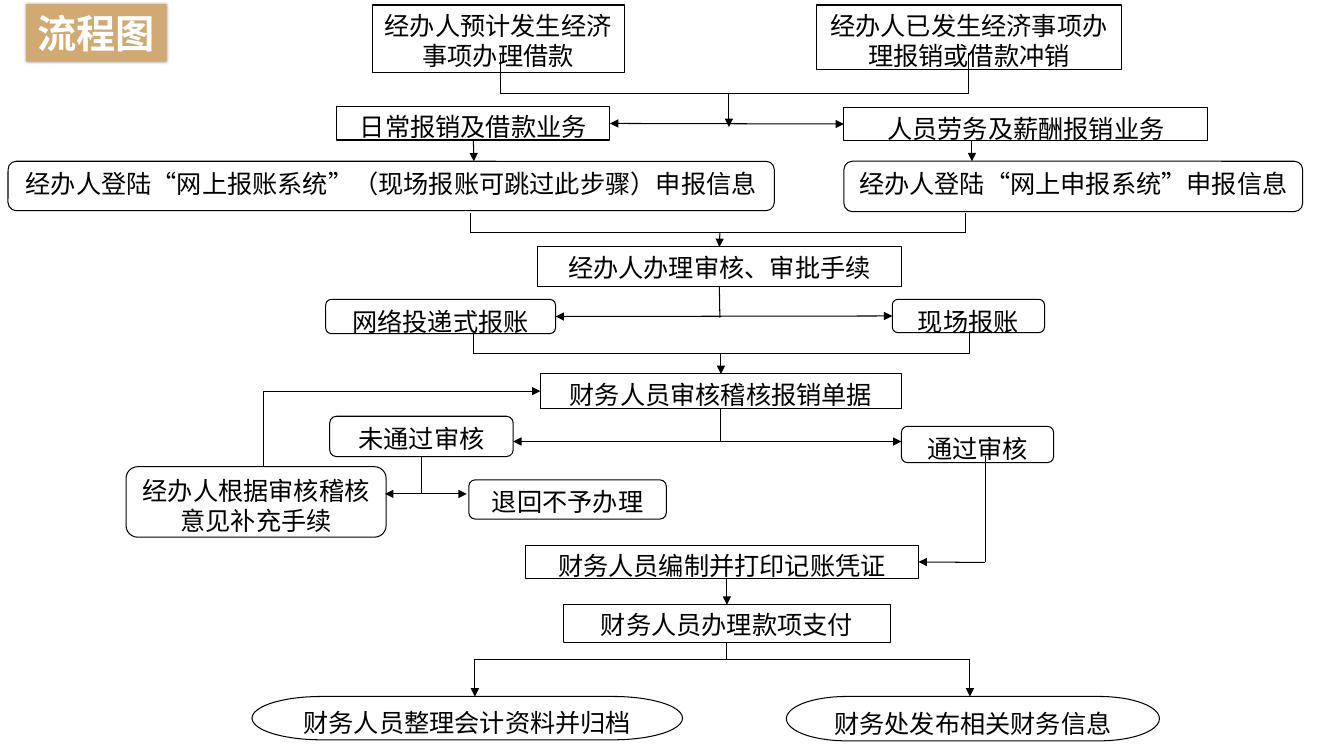
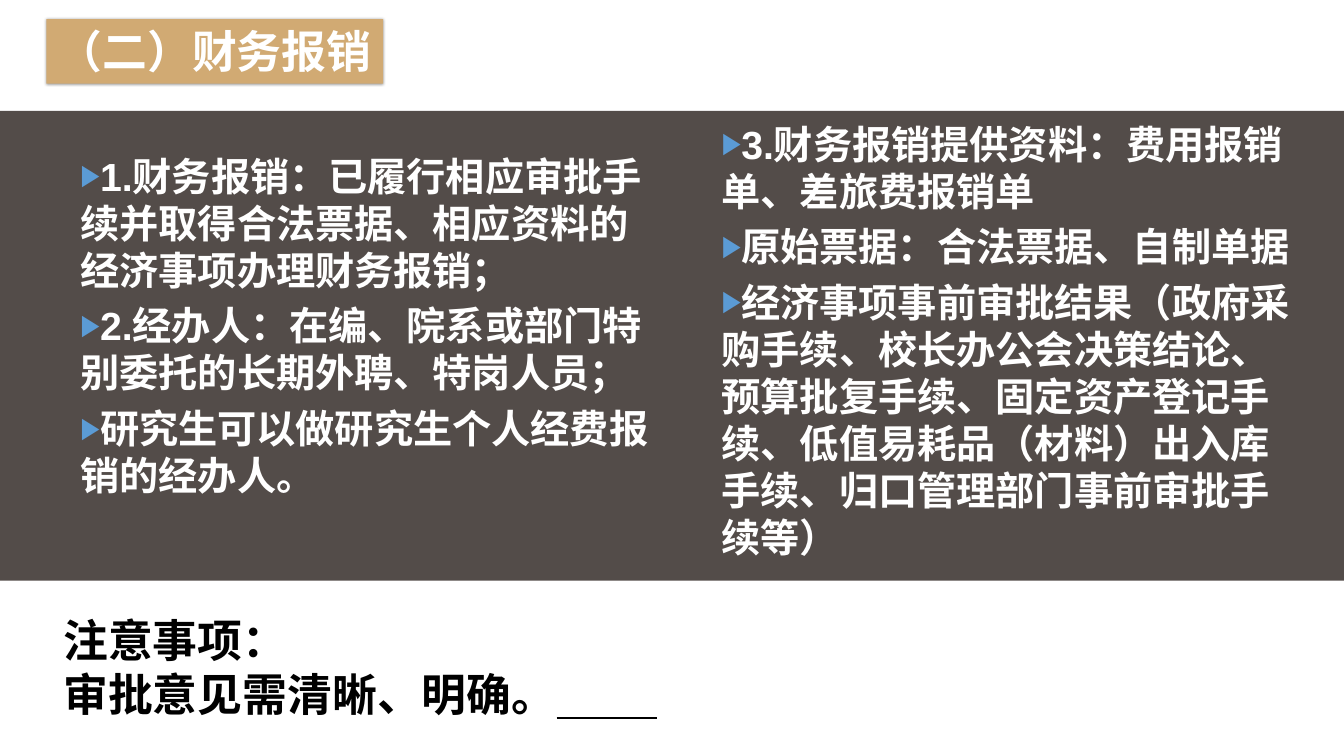
from lxml import etree
from pptx import Presentation
from pptx.dml.color import RGBColor
from pptx.enum.shapes import MSO_CONNECTOR, MSO_SHAPE
from pptx.enum.text import MSO_ANCHOR, MSO_AUTO_SIZE, PP_ALIGN
from pptx.oxml.ns import qn
from pptx.util import Inches, Pt

RECT = MSO_SHAPE.RECTANGLE
ROUND = MSO_SHAPE.ROUNDED_RECTANGLE
ALTERNATE = MSO_SHAPE.FLOWCHART_ALTERNATE_PROCESS
TERMINATOR = MSO_SHAPE.FLOWCHART_TERMINATOR
STRAIGHT = MSO_CONNECTOR.STRAIGHT
TOP, MIDDLE = MSO_ANCHOR.TOP, MSO_ANCHOR.MIDDLE
LEFT, CENTER = PP_ALIGN.LEFT, PP_ALIGN.CENTER
GROW = MSO_AUTO_SIZE.SHAPE_TO_FIT_TEXT

# Shared style
BLACK, WHITE = "000000", "FFFFFF"
GOLD, BROWN, BLUE = "D1AA73", "534C49", "5B9BD5"
FLOW_FONT, BODY_FONT, CJK_FONT = "Calibri", "Arial", "Noto Sans CJK JP"
SIDE_TOP, SIDE_LEFT, SIDE_BOTTOM, SIDE_RIGHT = range(4)


def rgb(color):
    return RGBColor.from_string(color)


def add_run(paragraph, text, size, font, color, bold=False):
    run = paragraph.add_run()
    run.text = text
    run.font.size = Pt(size)
    run.font.name = font
    run.font.bold = bold
    run.font.color.rgb = rgb(color)


def add_box(slide, kind, place, fill, line=None):
    box = slide.shapes.add_shape(kind, *map(Inches, place))
    box.shadow.inherit = False
    box.fill.solid()
    box.fill.fore_color.rgb = rgb(fill)
    if line:
        box.line.color.rgb = rgb(line)
        box.line.width = Pt(0.75)
    else:
        box.line.fill.background()
    return box


def add_title(slide, place, text, size, font):
    """Gold label with a soft shadow."""
    title = add_box(slide, RECT, place, GOLD)
    effects = title._element.spPr.find(qn("a:effectLst"))
    shadow = etree.SubElement(effects, qn("a:outerShdw"),
                              blurRad=str(Pt(2)), dist="0", dir="0")
    color = etree.SubElement(shadow, qn("a:srgbClr"), val=BLACK)
    etree.SubElement(color, qn("a:alpha"), val="40000")
    frame = title.text_frame
    frame.word_wrap = False
    frame.auto_size = GROW
    frame.vertical_anchor = TOP
    frame.paragraphs[0].alignment = CENTER
    add_run(frame.paragraphs[0], text, size, font, WHITE, bold=True)


def add_step(slide, kind, place, text):
    """White outlined step of the flow chart."""
    step = add_box(slide, kind, place, WHITE, BLACK)
    frame = step.text_frame
    frame.word_wrap = True
    frame.vertical_anchor = TOP
    frame.paragraphs[0].alignment = CENTER
    add_run(frame.paragraphs[0], text, 18, FLOW_FONT, BLACK)
    return step


def add_line(slide, start, end, head=False, tail=False, width=0.75):
    """Each end is an (x, y) point or a (step, side) pair."""
    glued = [not isinstance(stop[0], (int, float)) for stop in (start, end)]
    begin_at = (0, 0) if glued[0] else start
    end_at = (0, 0) if glued[1] else end
    line = slide.shapes.add_connector(STRAIGHT, *map(Inches, begin_at + end_at))
    if glued[0]:
        line.begin_connect(*start)
    if glued[1]:
        line.end_connect(*end)
    line.line.color.rgb = rgb(BLACK)
    line.line.width = Pt(width)
    outline = line.line._get_or_add_ln()
    for tag, wanted in (("a:headEnd", head), ("a:tailEnd", tail)):
        if wanted:
            etree.SubElement(outline, qn(tag), type="triangle")
    etree.SubElement(line._element.spPr, qn("a:effectLst"))


def add_bracket(slide, left, right, bar_y, leg_y, tail=False):
    """Horizontal bar with a leg at both ends."""
    add_line(slide, (left, bar_y), (right, bar_y))
    for x in (left, right):
        add_line(slide, (x, bar_y), (x, leg_y), tail=tail)


def add_text(slide, place, lines, size, color, anchor=TOP, bulleted=False):
    frame = slide.shapes.add_textbox(*map(Inches, place)).text_frame
    frame.word_wrap = True
    frame.auto_size = GROW
    frame.vertical_anchor = anchor
    for number, text in enumerate(lines):
        paragraph = frame.add_paragraph() if number else frame.paragraphs[0]
        paragraph.alignment = LEFT
        if bulleted:
            if number:
                paragraph.space_before = Pt(6)
            add_bullet(paragraph)
        add_run(paragraph, text, size, BODY_FONT, color, bold=True)


def add_bullet(paragraph):
    props = paragraph._p.get_or_add_pPr()
    props.set("marL", str(Inches(0.3)))
    props.set("indent", "0")
    color = etree.SubElement(props, qn("a:buClr"))
    etree.SubElement(color, qn("a:srgbClr"), val=BLUE)
    etree.SubElement(props, qn("a:buSzPct"), val="76000")
    etree.SubElement(props, qn("a:buFont"), typeface=BODY_FONT)
    etree.SubElement(props, qn("a:buChar"), char="▶")


def build_flow_chart(slide):
    # Steps, from top to bottom
    steps = {
        "loan": (RECT, (3.69, 0.05, 2.5, 0.67), "经办人预计发生经济事项办理借款"),
        "claim": (RECT, (8.1, 0.05, 3.02, 0.64), "经办人已发生经济事项办理报销或借款冲销"),
        "daily": (RECT, (3.34, 1.06, 2.71, 0.33), "日常报销及借款业务"),
        "salary": (RECT, (8.37, 1.07, 3.61, 0.32), "人员劳务及薪酬报销业务"),
        "daily_login": (ROUND, (0.08, 1.6, 7.6, 0.49),
                        "经办人登陆“网上报账系统”（现场报账可跳过此步骤）申报信息"),
        "salary_login": (ROUND, (8.37, 1.6, 4.55, 0.5),
                         "经办人登陆“网上申报系统”申报信息"),
        "approval": (RECT, (5.33, 2.45, 3.61, 0.39), "经办人办理审核、审批手续"),
        "online": (ALTERNATE, (3.23, 2.97, 2.28, 0.34), "网络投递式报账"),
        "on_site": (ALTERNATE, (8.85, 2.97, 1.51, 0.33), "现场报账"),
        "audit": (RECT, (5.36, 3.71, 3.58, 0.34), "财务人员审核稽核报销单据"),
        "failed": (ALTERNATE, (3.27, 4.13, 1.82, 0.4), "未通过审核"),
        "passed": (ALTERNATE, (8.94, 4.23, 1.51, 0.36), "通过审核"),
        "supplement": (ALTERNATE, (1.25, 4.63, 2.58, 0.7), "经办人根据审核稽核意见补充手续"),
        "rejected": (ALTERNATE, (4.65, 4.76, 1.96, 0.39), "退回不予办理"),
        "voucher": (RECT, (5.21, 5.41, 3.9, 0.33), "财务人员编制并打印记账凭证"),
        "payment": (RECT, (5.59, 6, 3.24, 0.37), "财务人员办理款项支付"),
        "archive": (TERMINATOR, (2.5, 6.91, 4.27, 0.43), "财务人员整理会计资料并归档"),
        "notice": (TERMINATOR, (7.8, 6.91, 3.7, 0.44), "财务处发布相关财务信息"),
    }
    step = {key: add_step(slide, *details) for key, details in steps.items()}

    # Request to business type and login
    add_bracket(slide, 4.96, 9.61, 0.93, 0.53)
    add_line(slide, (7.23, 0.93), (7.23, 1.26), tail=True)
    add_line(slide, (step["daily"], SIDE_RIGHT), (step["salary"], SIDE_LEFT),
             head=True, tail=True)
    add_line(slide, (step["daily"], SIDE_BOTTOM), (4.7, 1.6), tail=True)
    add_line(slide, (9.64, 1.39), (9.64, 1.6), tail=True)

    # Login to approval and the way of filing
    add_bracket(slide, 4.67, 9.58, 2.31, 2.11)
    add_line(slide, (7.14, 2.31), (step["approval"], SIDE_TOP), tail=True)
    add_line(slide, (step["approval"], SIDE_BOTTOM), (7.14, 3.15))
    add_line(slide, (step["online"], SIDE_RIGHT), (step["on_site"], SIDE_LEFT),
             head=True, tail=True)

    # Filing to audit and its result
    add_bracket(slide, 4.7, 9.62, 3.51, 3.3)
    add_line(slide, (7.15, 3.5), (step["audit"], SIDE_TOP), tail=True)
    add_line(slide, (step["audit"], SIDE_BOTTOM), (7.15, 4.38))
    add_line(slide, (5.09, 4.38), (8.94, 4.38), head=True, tail=True)

    # Failed audit: supplement and return, or reject
    add_line(slide, (step["failed"], SIDE_BOTTOM), (4.18, 4.9))
    add_line(slide, (3.82, 4.9), (4.63, 4.9), head=True, tail=True)
    add_line(slide, (2.61, 4.63), (2.61, 3.88))
    add_line(slide, (2.61, 3.88), (step["audit"], SIDE_LEFT), tail=True)

    # Passed audit: voucher, payment and closing steps
    add_line(slide, (9.77, 4.52), (9.77, 5.58))
    add_line(slide, (9.77, 5.58), (step["voucher"], SIDE_RIGHT), tail=True)
    add_line(slide, (7.21, 5.74), (step["payment"], SIDE_TOP), tail=True)
    add_line(slide, (step["payment"], SIDE_BOTTOM), (7.21, 6.54))
    add_bracket(slide, 4.71, 9.62, 6.54, 6.91, tail=True)

    add_title(slide, (0.26, 0.04, 1.39, 0.57), "流程图", 28, FLOW_FONT)


def build_reimbursement(slide):
    # Dark band with two columns
    add_box(slide, RECT, (0, 1.1, 13.33, 4.66), BROWN)
    add_text(slide, (0.4, 1.46, 6.26, 4.04), [
        "1.财务报销：已履行相应审批手续并取得合法票据、相应资料的经济事项办理财务报销；",
        "2.经办人：在编、院系或部门特别委托的长期外聘、特岗人员；",
        "研究生可以做研究生个人经费报销的经办人。",
    ], 28, WHITE, bulleted=True)
    add_text(slide, (6.76, 1.12, 6.17, 4.51), [
        "3.财务报销提供资料：费用报销单、差旅费报销单",
        "原始票据：合法票据、自制单据",
        "经济事项事前审批结果（政府采购手续、校长办公会决策结论、预算批复手续、"
        "固定资产登记手续、低值易耗品（材料）出入库手续、归口管理部门事前审批手续等）",
    ], 28, WHITE, anchor=MIDDLE, bulleted=True)

    # Reminder with a line to fill in
    add_text(slide, (0.53, 6.03, 9.95, 1.18),
             ["注意事项：", "审批意见需清晰、明确。"], 32, BLACK)
    add_line(slide, (5.52, 7.12), (6.52, 7.12), width=1.5)

    add_title(slide, (0.46, 0.19, 3.34, 0.64), "（二）财务报销", 32, CJK_FONT)


def main():
    deck = Presentation()
    deck.slide_width, deck.slide_height = Inches(13.33), Inches(7.5)
    blank = deck.slide_layouts[6]
    for build in (build_flow_chart, build_reimbursement):
        build(deck.slides.add_slide(blank))
    deck.save("out.pptx")


if __name__ == "__main__":
    main()
